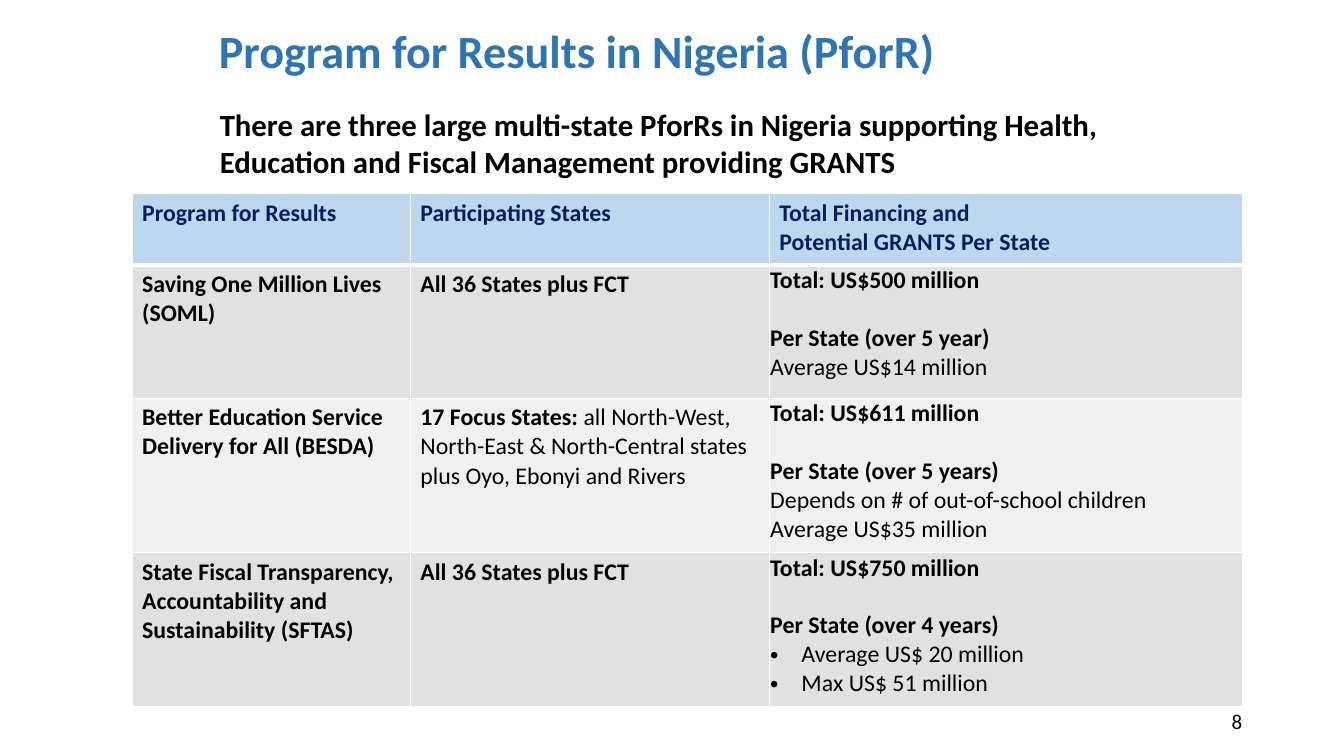
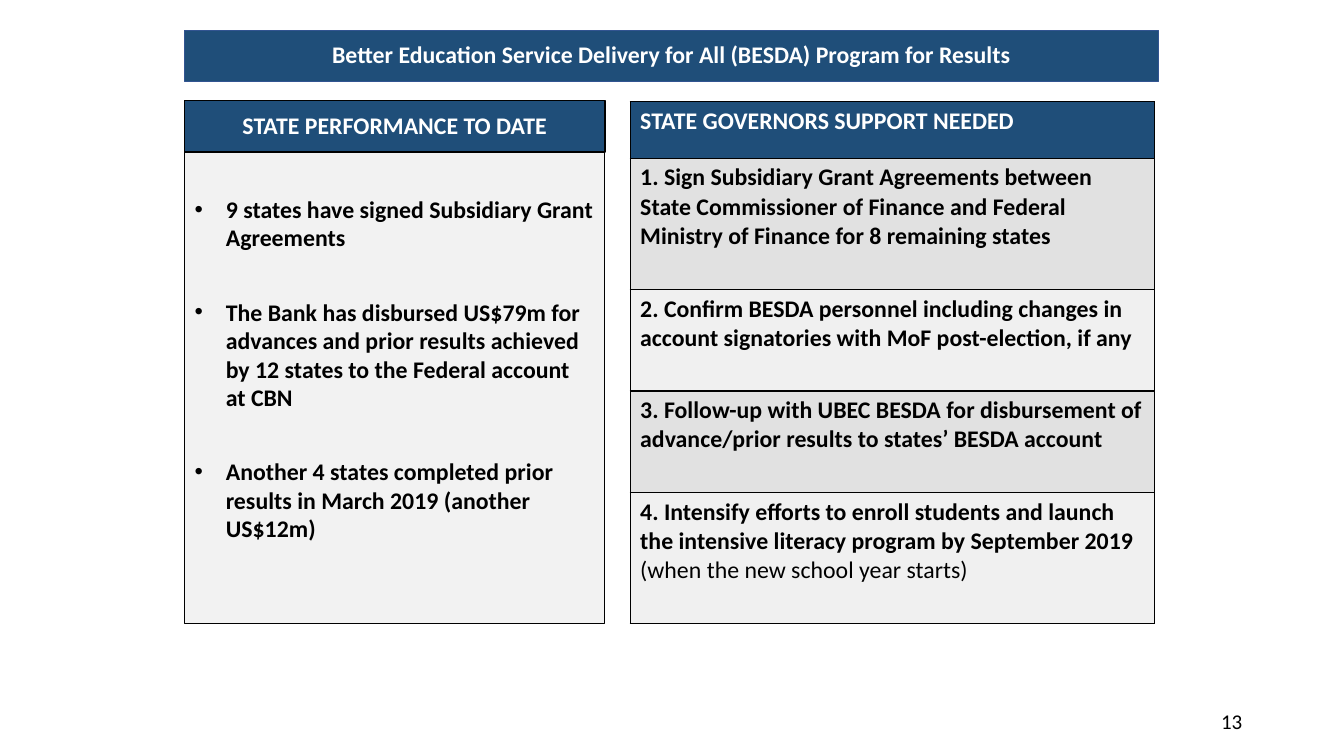
"""Build two slides on results programs in Nigeria."""
from dataclasses import dataclass

from lxml import etree
from pptx import Presentation
from pptx.dml.color import RGBColor
from pptx.enum.shapes import MSO_SHAPE
from pptx.enum.text import MSO_ANCHOR, MSO_AUTO_SIZE, PP_ALIGN
from pptx.oxml.ns import qn
from pptx.util import Emu, Pt

RECT = MSO_SHAPE.RECTANGLE
TOP, MIDDLE = MSO_ANCHOR.TOP, MSO_ANCHOR.MIDDLE
LEFT, CENTER, RIGHT = PP_ALIGN.LEFT, PP_ALIGN.CENTER, PP_ALIGN.RIGHT
NO_FIT = MSO_AUTO_SIZE.NONE
BULLET, SPLIT = "•", "|"


@dataclass(frozen=True)
class Theme:
    font: str = "Calibri"
    title: str = "2E75B6"
    navy: str = "1F4E79"
    edge: str = "325491"
    head: str = "BDD7EE"
    label: str = "002060"
    dark: str = "E1E1E1"
    pale: str = "F0F0F0"
    panel: str = "F2F2F2"
    black: str = "000000"
    white: str = "FFFFFF"
    big: int = 33
    lead: int = 22
    text: int = 17
    small: int = 15


T = Theme()
SIZE = (1333, 750)
NUMBER = (942, 695, 300, 40)

GRANTS = {
    "page": "8",
    "title": "Program for Results in Nigeria (PforR)",
    "lead": "There are three large multi-state PforRs in Nigeria supporting Health, "
            "Education and Fiscal Management providing GRANTS",
    "cols": (276, 356, 469),
    "rows": (71, 132, 153, 153),
    "cells": [
        ("Program for Results", "Participating States",
         [["Total Financing and", "Potential GRANTS Per State"]]),
        ("Saving One Million Lives (SOML)", "All 36 States plus FCT",
         [["Total: US$500 million"],
          ["Per State (over 5 year)", "|Average US$14 million"]]),
        ("Better Education Service Delivery for All (BESDA)",
         "17 Focus States: |all North-West, North-East & North-Central states "
         "plus Oyo, Ebonyi and Rivers",
         [["Total: US$611 million"],
          ["Per State (over 5 years)", "|Depends on # of out-of-school children",
           "|Average US$35 million"]]),
        ("State Fiscal Transparency, Accountability and Sustainability (SFTAS)",
         "All 36 States plus FCT",
         [["Total: US$750 million"],
          ["Per State (over 4 years)", "•|Average US$ 20 million",
           "•|Max US$ 51 million"]]),
    ],
}

BESDA = {
    "page": "13",
    "title": "Better Education Service Delivery for All (BESDA) Program for Results",
    "head": "STATE PERFORMANCE TO DATE",
    "done": [
        ["•9 states have signed Subsidiary Grant Agreements"],
        ["•The Bank has disbursed US$79m for advances and prior results achieved "
         "by 12 states to the Federal account at CBN"],
        ["•Another 4 states completed prior results in March 2019 (another US$12m)"],
    ],
    "cols": (520,),
    "rows": (56, 130, 101, 101, 130),
    "cells": [
        ("STATE GOVERNORS SUPPORT NEEDED",),
        ("1. Sign Subsidiary Grant Agreements between State Commissioner of Finance "
         "and Federal Ministry of Finance for 8 remaining states",),
        ("2. Confirm BESDA personnel including changes in account signatories "
         "with MoF post-election, if any",),
        ("3. Follow-up with UBEC BESDA for disbursement of advance/prior results "
         "to states’ BESDA account",),
        ("4. Intensify efforts to enroll students and launch the intensive literacy "
         "program by September 2019 |(when the new school year starts)",),
    ],
}


def px(n):
    return Emu(n * 9144)


def rgb(code):
    return RGBColor.from_string(code)


def write(frame, text, size=T.text, color=T.black, bold=True, align=LEFT,
          line=1.0, gap=20.5):
    """Fill a frame with groups of lines; "|" ends the bold part of a line."""
    groups = [[text]] if isinstance(text, str) else text
    lines = [(row, gap if g and not i else 0)
             for g, group in enumerate(groups) for i, row in enumerate(group)]
    for n, (row, space) in enumerate(lines):
        para = frame.add_paragraph() if n else frame.paragraphs[0]
        para.alignment, para.line_spacing = align, line
        para.space_before, para.space_after = Pt(space), Pt(0)
        mark(para, row.startswith(BULLET))
        for i, part in enumerate(row.removeprefix(BULLET).split(SPLIT)):
            if part:
                run = para.add_run()
                run.text = part
                font = run.font
                font.name, font.size = T.font, Pt(size)
                font.bold = bold and i == 0
                font.color.rgb = rgb(color)


def mark(para, dotted):
    """Set or clear the bullet of a paragraph."""
    props = para._p.get_or_add_pPr()
    hang = px(31) if dotted else 0
    props.set("marL", str(hang))
    props.set("indent", str(-hang))
    if dotted:
        etree.SubElement(props, qn("a:buFont")).set("typeface", "Arial")
        etree.SubElement(props, qn("a:buChar")).set("char", BULLET)
    else:
        etree.SubElement(props, qn("a:buNone"))


def place(shape, box, anchor=TOP):
    """Move a shape and return its text frame."""
    shape.left, shape.top, shape.width, shape.height = map(px, box)
    frame = shape.text_frame
    frame.word_wrap, frame.auto_size = True, NO_FIT
    frame.vertical_anchor = anchor
    return frame


def paint(shape, fill, line, width=1):
    shape.fill.solid()
    shape.fill.fore_color.rgb = rgb(fill)
    shape.line.color.rgb = rgb(line)
    shape.line.width = Pt(width)


def border(cell, color, widths):
    """Draw the left, right, top and bottom lines of a cell."""
    props = cell._tc.get_or_add_tcPr()
    for i, (side, width) in enumerate(zip("LRTB", widths)):
        line = etree.Element(qn(f"a:ln{side}"), w=str(Pt(width)))
        fill = etree.SubElement(line, qn("a:solidFill"))
        etree.SubElement(fill, qn("a:srgbClr")).set("val", color)
        props.insert(i, line)


def grid(slide, data, left, top, head, label, edge, rule=1):
    """Add a table with a head row and striped rows."""
    cols, rows = data["cols"], data["rows"]
    box = map(px, (left, top, sum(cols), sum(rows)))
    table = slide.shapes.add_table(len(rows), len(cols), *box).table
    for col, width in zip(table.columns, cols):
        col.width = px(width)
    for r, (height, texts) in enumerate(zip(rows, data["cells"])):
        table.rows[r].height = px(height)
        fill = (T.dark if r % 2 else T.pale) if r else head
        for c, text in enumerate(texts):
            cell = table.cell(r, c)
            cell.fill.solid()
            cell.fill.fore_color.rgb = rgb(fill)
            border(cell, edge, (1, 1, rule if r == 1 else 1, 1 if r else rule))
            write(cell.text_frame, text, color=T.black if r else label)
    return table


def start(deck, data):
    """Add a slide with its page number; return it with its placeholders."""
    slide = deck.slides.add_slide(deck.slide_layouts[1])
    frame = place(slide.shapes.add_textbox(0, 0, 0, 0), NUMBER, MIDDLE)
    write(frame, data["page"], size=T.small, bold=False, align=RIGHT)
    return slide, slide.shapes.title, slide.placeholders[1]


def grants(deck):
    slide, title, body = start(deck, GRANTS)
    write(place(title, (207, 15, 862, 77), MIDDLE), GRANTS["title"],
          size=T.big, color=T.title, line=0.9)
    write(place(body, (208, 100, 891, 84)), GRANTS["lead"], size=T.lead)
    table = grid(slide, GRANTS, 131, 192, T.head, T.label, T.white, rule=3)
    for r in range(1, len(GRANTS["rows"])):
        cell = table.cell(r, 2)
        cell.margin_left = cell.margin_right = cell.margin_top = px(1)
        cell.margin_bottom = 0


def besda(deck):
    slide, title, body = start(deck, BESDA)
    left, wide, tall = 183, 417, 51
    top = 100
    paint(body, T.panel, T.black, 0.75)
    frame = place(body, (left, top + tall, wide, 468))
    frame.margin_top = px(42)
    write(frame, BESDA["done"], gap=32.5)
    head = slide.shapes.add_shape(RECT, 0, 0, 0, 0)
    head.shadow.inherit = False
    bands = ((head, "head", top, wide, T.black), (title, "title", 30, 966, T.edge))
    for shape, key, y, width, edge in bands:
        paint(shape, T.navy, edge)
        write(place(shape, (left, y, width, tall), MIDDLE), BESDA[key],
              color=T.white, align=CENTER, line=0.9)
    grid(slide, BESDA, 625, 101, T.navy, T.white, T.black)


def main():
    deck = Presentation()
    deck.slide_width, deck.slide_height = map(px, SIZE)
    grants(deck)
    besda(deck)
    deck.save("out.pptx")


if __name__ == "__main__":
    main()
